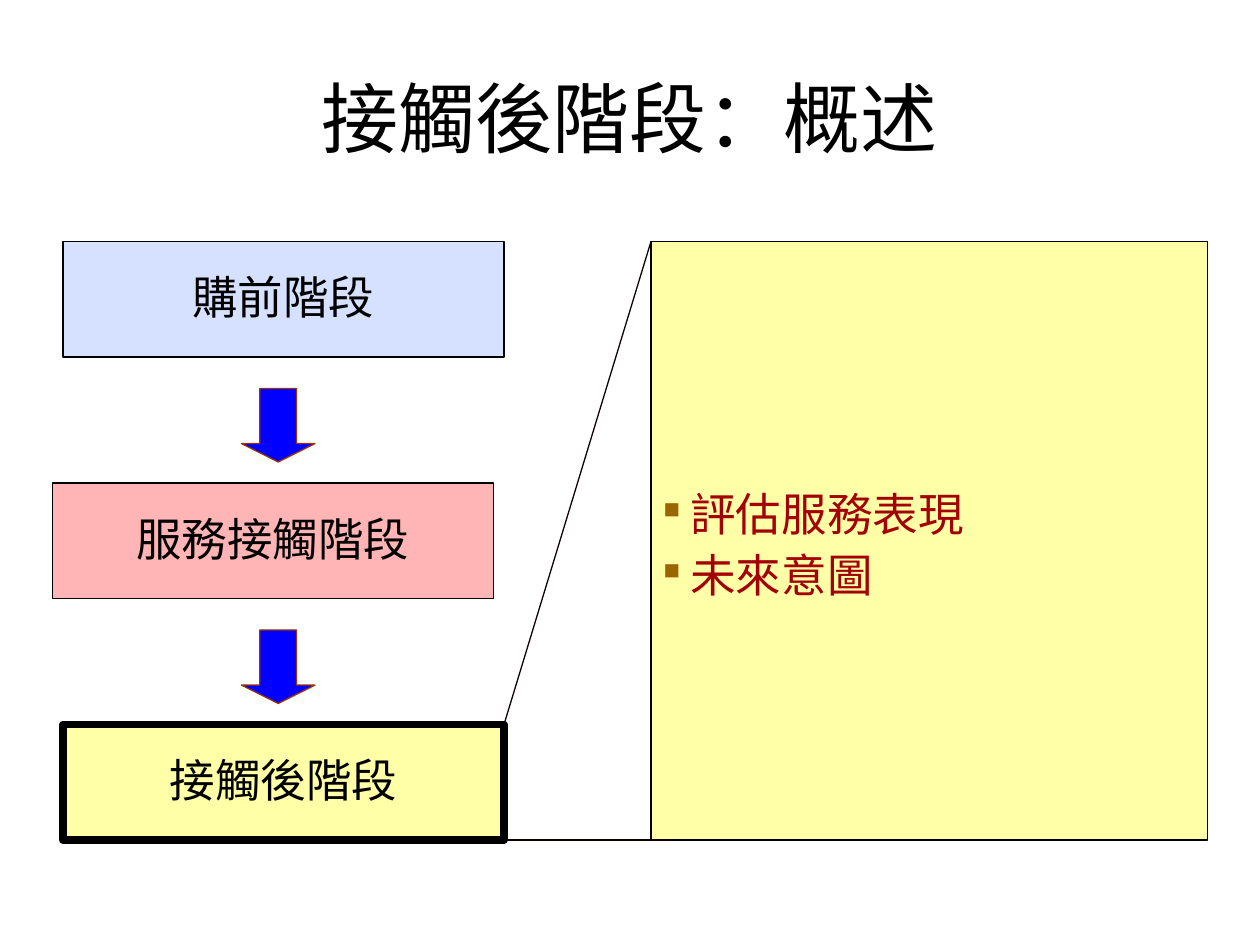
from dataclasses import dataclass

from lxml import etree
from pptx import Presentation
from pptx import util as u
from pptx.dml.color import RGBColor
from pptx.enum import shapes, text
from pptx.oxml import ns

FONT = "Noto Sans CJK SC"
COLORS = {
    "black": "000000",
    "blue": "3366FF",
    "red": "FF0000",
    "yellow": "FFFF99",
    "arrow": "0000FF",
    "arrow_edge": "993300",
    "callout": "0C0300",
    "bullet": "996600",
    "detail": "A30105",
}
STAGE_WIDTH, STAGE_HEIGHT = 252, 66
TOP, PITCH = 138, 138
ARROW_LEFT, ARROW_SIZE, ARROW_OFFSET = 138, 42, 84
PANEL_LEFT, PANEL_WIDTH = 372, 318


@dataclass
class Box:
    left: float
    top: float
    width: float
    height: float


@dataclass
class Stage:
    label: str
    left: float
    color: str
    opacity: int
    border: float = 0.75


STAGES = [
    Stage("購前階段", 36, "blue", 20),
    Stage("服務接觸階段", 30, "red", 29),
    Stage("接觸後階段", 36, "yellow", 85, 4.5),
]
DETAILS = [" 評估服務表現", " 未來意圖"]


def rgb(name: str) -> RGBColor:
    return RGBColor.from_string(COLORS[name])


def place(box: Box) -> list:
    return [u.Pt(value) for value in (box.left, box.top, box.width, box.height)]


def add_figure(slide, kind, box: Box, fill: str, edge: str = "black",
               border: float = 0.75, opacity: int = 100):
    shape = slide.shapes.add_shape(kind, *place(box))
    shape.shadow.inherit = False
    shape.fill.solid()
    shape.fill.fore_color.rgb = rgb(fill)
    if opacity < 100:
        color = shape.fill._xPr.find(".//" + ns.qn("a:srgbClr"))
        etree.SubElement(color, ns.qn("a:alpha"), val=str(opacity * 1000))
    shape.line.color.rgb = rgb(edge)
    shape.line.width = u.Pt(border)
    return shape


def set_text(shape, lines: list[str], size: float, color: str, align, spacing: float) -> None:
    frame = shape.text_frame
    frame.text = "\n".join(lines)
    frame.vertical_anchor = text.MSO_ANCHOR.MIDDLE
    for paragraph in frame.paragraphs:
        paragraph.alignment = align
        paragraph.line_spacing = spacing
        for run in paragraph.runs:
            run.font.name = FONT
            run.font.size = u.Pt(size)
            run.font.color.rgb = rgb(color)
            etree.SubElement(run.font._element, ns.qn("a:ea"), typeface=FONT)


def add_bullet(paragraph) -> None:
    properties = paragraph._p.get_or_add_pPr()
    color = etree.SubElement(properties, ns.qn("a:buClr"))
    etree.SubElement(color, ns.qn("a:srgbClr"), val=COLORS["bullet"])
    etree.SubElement(properties, ns.qn("a:buSzPct"), val="50000")
    etree.SubElement(properties, ns.qn("a:buChar"), char="■")


def add_stage(slide, stage: Stage, top: float) -> None:
    box = Box(stage.left, top, STAGE_WIDTH, STAGE_HEIGHT)
    shape = add_figure(slide, shapes.MSO_SHAPE.RECTANGLE, box, stage.color,
                       border=stage.border, opacity=stage.opacity)
    set_text(shape, [stage.label], 26, "black", text.PP_ALIGN.CENTER, 0.95)
    shape.text_frame.word_wrap = False


def add_arrow(slide, top: float) -> None:
    box = Box(ARROW_LEFT, top, ARROW_SIZE, ARROW_SIZE)
    arrow = add_figure(slide, shapes.MSO_SHAPE.DOWN_ARROW, box, "arrow", "arrow_edge")
    arrow.adjustments[0] = 0.5
    arrow.adjustments[1] = 0.25


def add_panel(slide, height: float) -> None:
    box = Box(PANEL_LEFT, TOP, PANEL_WIDTH, height)
    panel = add_figure(slide, shapes.MSO_SHAPE.RECTANGLE, box, "yellow", opacity=85)
    set_text(panel, DETAILS, 26, "detail", text.PP_ALIGN.LEFT, 1.12)
    panel.text_frame.word_wrap = False
    for paragraph in panel.text_frame.paragraphs:
        add_bullet(paragraph)


def add_title(slide, title: str) -> None:
    shape = slide.shapes.add_textbox(*place(Box(36, 21.6, 648, 90)))
    set_text(shape, [title], 44, "black", text.PP_ALIGN.CENTER, 1.0)
    shape.text_frame.word_wrap = True


def add_line(slide, start: tuple[float, float], end: tuple[float, float]) -> None:
    points = [u.Pt(value) for value in (*start, *end)]
    line = slide.shapes.add_connector(shapes.MSO_CONNECTOR.STRAIGHT, *points)
    line.line.color.rgb = rgb("callout")
    line.line.width = u.Pt(0.75)
    etree.SubElement(line._element.spPr, ns.qn("a:effectLst"))


def main() -> None:
    presentation = Presentation()
    presentation.slide_width = u.Pt(720)
    presentation.slide_height = u.Pt(540)
    slide = presentation.slides.add_slide(presentation.slide_layouts[6])

    for index, stage in enumerate(STAGES):
        add_stage(slide, stage, TOP + index * PITCH)
    for index in range(len(STAGES) - 1):
        add_arrow(slide, TOP + index * PITCH + ARROW_OFFSET)

    last = STAGES[-1]
    last_top = TOP + (len(STAGES) - 1) * PITCH
    bottom = last_top + STAGE_HEIGHT
    right = last.left + STAGE_WIDTH
    add_panel(slide, bottom - TOP)
    add_title(slide, "接觸後階段：概述")
    add_line(slide, (right, last_top), (PANEL_LEFT, TOP))
    add_line(slide, (right, bottom), (PANEL_LEFT + 12, bottom))

    presentation.save("out.pptx")


if __name__ == "__main__":
    main()
